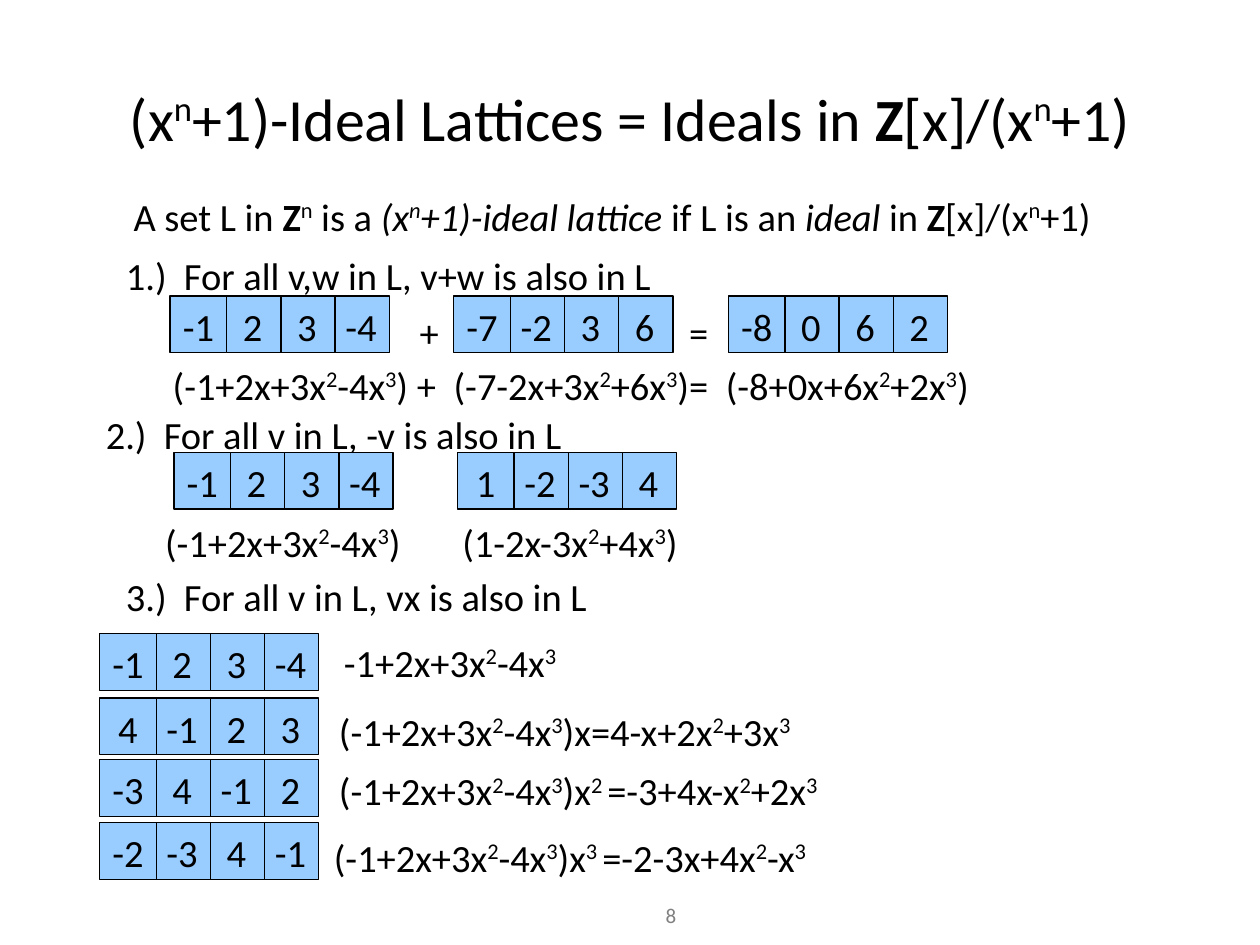
from dataclasses import dataclass
from lxml.etree import SubElement
from pptx import Presentation
from pptx.dml.color import RGBColor
from pptx.enum.shapes import MSO_SHAPE
from pptx.enum.text import MSO_ANCHOR, MSO_AUTO_SIZE, PP_ALIGN
from pptx.oxml.ns import qn
from pptx.util import Inches, Pt


@dataclass(frozen=True)
class Theme:
    font: str = "Calibri"
    ink: RGBColor = RGBColor(0, 0, 0)
    cell: RGBColor = RGBColor(0x99, 0xCC, 0xFF)
    gray: RGBColor = RGBColor(0x80, 0x80, 0x80)
    head: float = 34.2
    body: float = 22
    foot: float = 12
    line: float = 0.75


def poly(text):
    """Split text at carets into plain and raised runs in turn."""
    return [(part, "^" if i % 2 else "")
            for i, part in enumerate(text.split("^")) if part]


class Page:
    """Holds the theme and the current slide and draws each kind of element."""

    side = 0.45
    step = 0.43

    def __init__(self, theme, slide):
        self.theme = theme
        self.slide = slide

    def fill(self, frame, runs, size, color, align=PP_ALIGN.LEFT,
             anchor=MSO_ANCHOR.TOP, wrap=True, tabs=()):
        frame.word_wrap = wrap
        frame.auto_size = MSO_AUTO_SIZE.NONE
        frame.vertical_anchor = anchor
        frame.margin_left = frame.margin_right = Inches(0.09)
        frame.margin_top, frame.margin_bottom = Inches(0.06), Inches(0.04)
        para = frame.paragraphs[0]
        para.alignment = align
        if tabs:
            stops = SubElement(para._p.get_or_add_pPr(), qn("a:tabLst"))
            for pos in tabs:
                SubElement(stops, qn("a:tab"), pos=str(Inches(pos)), algn="l")
        for text, style in runs:
            run = para.add_run()
            run.text = text
            font = run.font
            font.name, font.size = self.theme.font, Pt(size)
            font.color.rgb = color
            font.bold, font.italic = "b" in style, "i" in style
            if "^" in style:
                run._r.get_or_add_rPr().set("baseline", "33000")

    def title(self, runs):
        shape = self.slide.shapes.title
        shape.left, shape.top = Inches(0.5), Inches(0.3)
        shape.width, shape.height = Inches(9), Inches(1.25)
        self.fill(shape.text_frame, runs, self.theme.head, self.theme.ink,
                  PP_ALIGN.CENTER, MSO_ANCHOR.MIDDLE)

    def text(self, left, top, width, runs, tabs=()):
        box = self.slide.shapes.add_textbox(
            Inches(left), Inches(top), Inches(width), Inches(0.34))
        self.fill(box.text_frame, runs, self.theme.body, self.theme.ink, tabs=tabs)

    def number(self, text):
        box = self.slide.shapes.add_textbox(
            Inches(4.71), Inches(7.1), Inches(1.23), Inches(0.4))
        self.fill(box.text_frame, [(text, "")], self.theme.foot,
                  self.theme.gray, PP_ALIGN.CENTER)

    def vector(self, left, top, values):
        for i, value in reversed(list(enumerate(values))):
            cell = self.slide.shapes.add_shape(
                MSO_SHAPE.ROUNDED_RECTANGLE, Inches(left + i * self.step),
                Inches(top), Inches(self.side), Inches(self.side))
            cell.adjustments[0] = 0
            cell.shadow.inherit = False
            cell.fill.solid()
            cell.fill.fore_color.rgb = self.theme.cell
            cell.line.color.rgb = self.theme.ink
            cell.line.width = Pt(self.theme.line)
            self.fill(cell.text_frame, [(str(value), "")], self.theme.body,
                      self.theme.ink, PP_ALIGN.CENTER, MSO_ANCHOR.MIDDLE, False)


def main():
    deck = Presentation()
    deck.slide_width, deck.slide_height = Inches(10), Inches(7.5)
    page = Page(Theme(), deck.slides.add_slide(deck.slide_layouts[5]))
    ring = [("Z", "b"), *poly("[x]/(x^n^+1)")]

    page.number("8")
    page.title([*poly("(x^n^+1)-Ideal Lattices = Ideals in "), *ring])
    page.text(0.97, 1.47, 7.94, [
        ("A set L in ", ""), ("Z", "b"), ("n", "^"), (" is a ", ""),
        ("(x", "i"), ("n", "i^"), ("+1)-ideal lattice ", "i"),
        ("if L is an ", ""), ("ideal ", "i"), ("in ", ""), *ring])

    rules = [
        (0.91, 1.94, "1.)\tFor all v,w in L, v+w is also in L"),
        (0.75, 3.2, "2.)\tFor all v in L, -v is also in L"),
        (0.91, 4.49, "3.)\tFor all v in L, vx is also in L"),
    ]
    for left, top, rule in rules:
        page.text(left, top, 4.76, poly(rule), [0.46])

    base = "(-1+2x+3x^2^-4x^3^)"
    first = [-1, 2, 3, -4]
    page.text(1.28, 2.81, 8.05,
              poly(base + " +\t(-7-2x+3x^2^+6x^3^)=\t(-8+0x+6x^2^+2x^3^)"),
              [2.23, 4.39])
    page.text(1.22, 4.06, 4.74, poly(base + "\t(1-2x-3x^2^+4x^3^)"), [2.36])

    vectors = [
        (1.35, 2.35, first), (3.6, 2.35, [-7, -2, 3, 6]),
        (5.78, 2.35, [-8, 0, 6, 2]),
        (1.38, 3.59, first), (3.63, 3.59, [1, -2, -3, 4]),
    ]
    for left, top, values in vectors:
        page.vector(left, top, values)
    for left, sign in [(3.24, "+"), (5.38, "=")]:
        page.text(left, 2.39, 0.45, poly(sign))

    shifts = [
        (5.03, 2.64, 5.01, "-1+2x+3x^2^-4x^3^"),
        (5.54, 2.6, 5.56, base + "x=4-x+2x^2^+3x^3^"),
        (6.03, 2.6, 6.03, base + "x^2 ^=-3+4x-x^2^+2x^3^"),
        (6.53, 2.56, 6.56, base + "x^3 ^=-2-3x+4x^2^-x^3^"),
    ]
    values = first
    for row, left, top, text in shifts:
        page.vector(0.79, row, values)
        page.text(left, top, 4.76, poly(text))
        values = [-values[-1], *values[:-1]]

    deck.save("out.pptx")


if __name__ == "__main__":
    main()
